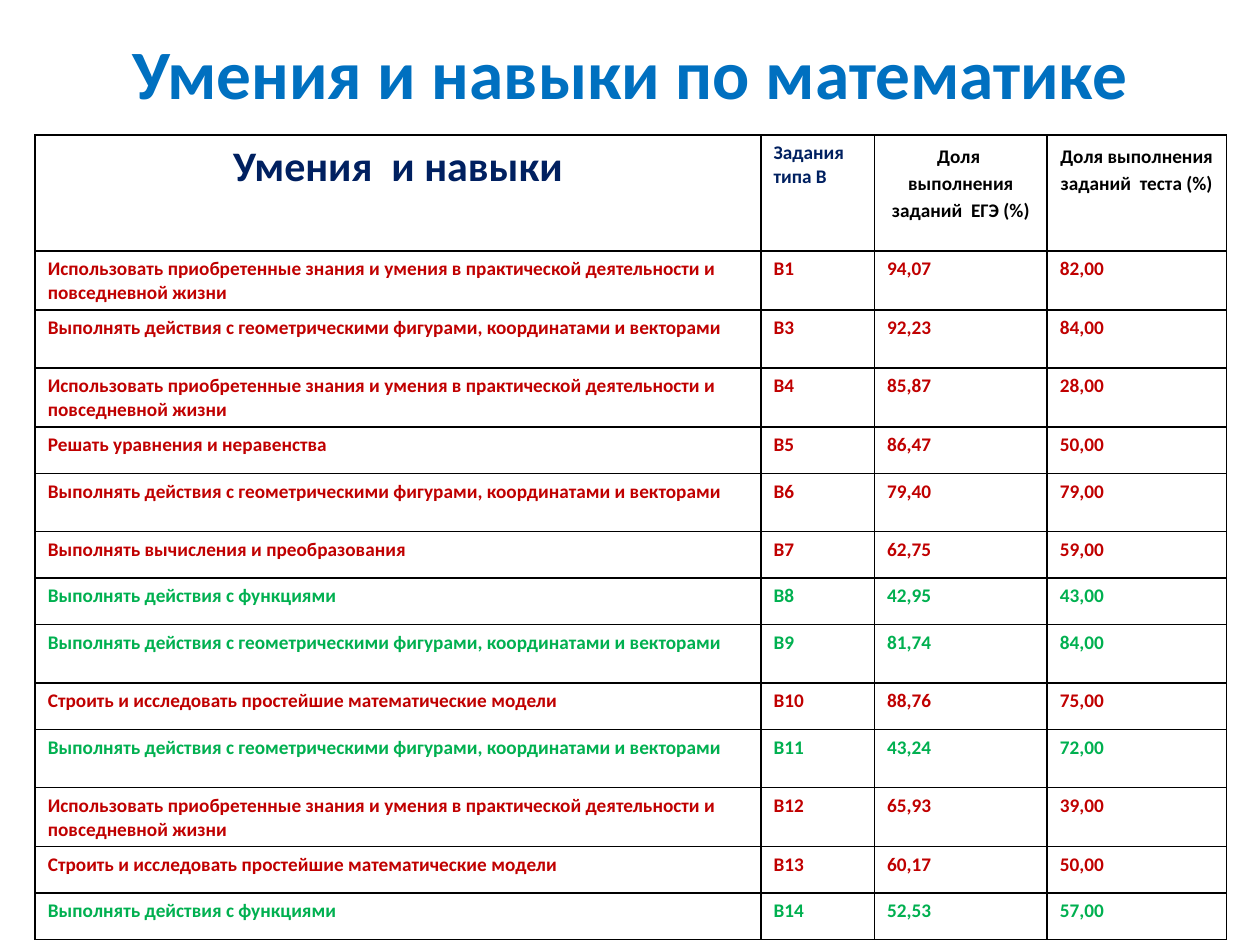
from lxml.etree import SubElement, fromstring
from pptx import Presentation
from pptx.dml.color import RGBColor
from pptx.enum.text import MSO_ANCHOR as Anchor, PP_ALIGN as Align
from pptx.oxml.ns import qn
from pptx.util import Cm, Pt

NAVY, BLACK, RED, GREEN = "002060", "000000", "C00000", "00B050"
PRACTICE = "Использовать приобретенные знания и умения в практической деятельности и повседневной жизни"
GEOMETRY = "Выполнять действия с геометрическими фигурами, координатами и векторами"
EQUATIONS = "Решать уравнения и неравенства"
CALCULATIONS = "Выполнять вычисления и преобразования"
FUNCTIONS = "Выполнять действия с функциями"
MODELS = "Строить и исследовать простейшие математические модели"
TALL, SHORT = 1.17, 0.94

headers = [
    ("Умения  и навыки", 24, NAVY, {"alignment": Align.CENTER}),
    ("Задания типа В", 11, NAVY, {}),
    ("Доля  выполнения заданий  ЕГЭ (%)", 11, BLACK, {"alignment": Align.CENTER, "line_spacing": 1.15}),
    ("Доля выполнения заданий  теста (%)", 11, BLACK, {"alignment": Align.CENTER, "line_spacing": 1.15}),
]
skills = [
    (PRACTICE, "В1", "94,07", "82,00", RED, TALL),
    (GEOMETRY, "В3", "92,23", "84,00", RED, TALL),
    (PRACTICE, "В4", "85,87", "28,00", RED, TALL),
    (EQUATIONS, "В5", "86,47", "50,00", RED, SHORT),
    (GEOMETRY, "В6", "79,40", "79,00", RED, TALL),
    (CALCULATIONS, "В7", "62,75", "59,00", RED, SHORT),
    (FUNCTIONS, "В8", "42,95", "43,00", GREEN, SHORT),
    (GEOMETRY, "В9", "81,74", "84,00", GREEN, TALL),
    (MODELS, "В10", "88,76", "75,00", RED, SHORT),
    (GEOMETRY, "В11", "43,24", "72,00", GREEN, TALL),
    (PRACTICE, "В12", "65,93", "39,00", RED, TALL),
    (MODELS, "В13", "60,17", "50,00", RED, SHORT),
    (FUNCTIONS, "В14", "52,53", "57,00", GREEN, SHORT),
]
rows = [headers] + [[(text, 11, color, {}) for text in texts] for *texts, color, height in skills]
row_heights = [2.34] + [skill[-1] for skill in skills]
column_widths = [14.63, 2.29, 3.48, 3.61]


def rgb(color):
    return RGBColor.from_string(color)


def write(paragraph, text, size, color, layout):
    for name, value in layout.items():
        setattr(paragraph, name, value)
    run = paragraph.add_run()
    run.text = text
    run.font.color.rgb = rgb(color)
    for name, value in {"name": "Calibri", "size": Pt(size), "bold": True}.items():
        setattr(run.font, name, value)
    return run


presentation = Presentation()
presentation.slide_width, presentation.slide_height = Cm(25.4), Cm(19.05)
slide = presentation.slides.add_slide(presentation.slide_layouts[6])

title = slide.shapes.add_textbox(Cm(1.27), Cm(0.76), Cm(22.86), Cm(1.37))
frame = title.text_frame
for name, value in {"word_wrap": True, "vertical_anchor": Anchor.MIDDLE}.items():
    setattr(frame, name, value)
title_run = write(frame.paragraphs[0], "Умения и навыки по математике", 39.6, "0070C0", {"alignment": Align.CENTER})
shadow = fromstring(
    '<a:effectLst xmlns:a="http://schemas.openxmlformats.org/drawingml/2006/main">'
    '<a:outerShdw blurRad="38100" dist="38100" dir="10800000">'
    '<a:srgbClr val="000000"><a:alpha val="50000"/></a:srgbClr>'
    '</a:outerShdw></a:effectLst>'
)
title_run.font.fill._xPr.find(qn("a:solidFill")).addnext(shadow)

table = slide.shapes.add_table(
    len(rows), len(column_widths), Cm(0.71), Cm(2.72), Cm(sum(column_widths)), Cm(sum(row_heights))
).table
for name in ("first_row", "horz_banding"):
    setattr(table, name, False)
for column, width in zip(table.columns, column_widths):
    column.width = Cm(width)

for row, height, entries in zip(table.rows, row_heights, rows):
    row.height = Cm(height)
    for cell, entry in zip(row.cells, entries):
        write(cell.text_frame.paragraphs[0], *entry)
        properties = cell._tc.get_or_add_tcPr()
        for side in ("lnL", "lnR", "lnT", "lnB"):
            border = SubElement(properties, qn(f"a:{side}"), w=str(Pt(1)))
            SubElement(SubElement(border, qn("a:solidFill")), qn("a:srgbClr"), val=BLACK)
        cell.fill.solid()
        cell.fill.fore_color.rgb = rgb("FFFFFF")

presentation.save("out.pptx")
